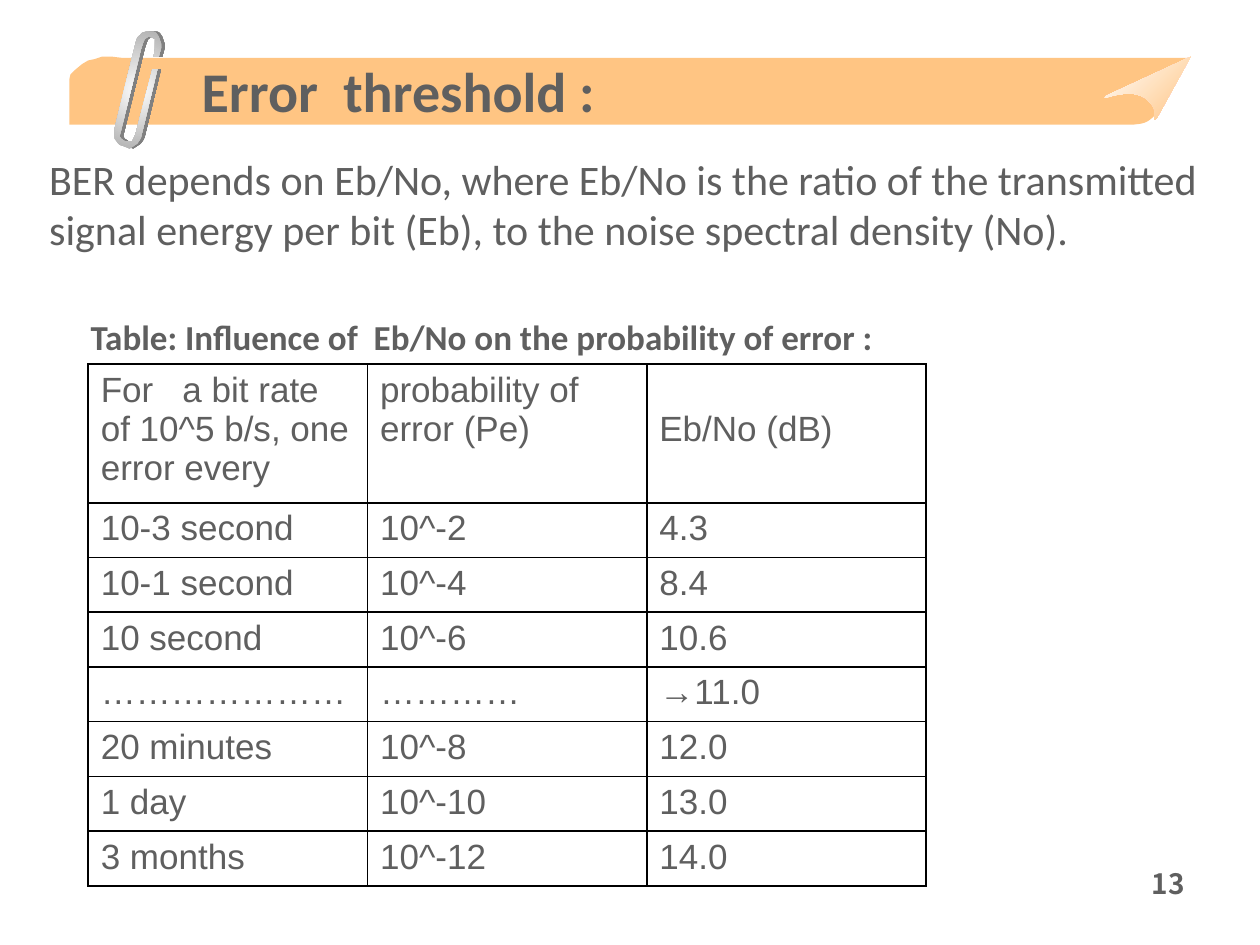
from dataclasses import dataclass

from lxml import etree
from pptx import Presentation, util as u
from pptx.dml import color
from pptx.enum import text
from pptx.oxml import ns


@dataclass(frozen=True)
class Theme:
    """Colours, fonts and type sizes of the deck."""
    ink: str = "5F5F5F"
    band: str = "FFC583"
    white: str = "FFFFFF"
    steel: tuple = ("FCFCFC", "B2B2B2")
    shade: str = "808080"
    rule: str = "000000"
    face: str = "Calibri"
    grid: str = "Arial"
    page: str = "Noto Sans CJK KR"
    head: int = 32
    body: int = 24
    cell: int = 20
    foot: int = 16


def rgb(code):
    """Turn a hex code into a colour."""
    return color.RGBColor.from_string(code)


def apply(item, vals):
    """Set each named value on an object."""
    for name, val in vals.items():
        setattr(item, name, val)


def node(parent, tag, **attrs):
    """Add a drawing element below a parent."""
    return etree.SubElement(parent, ns.qn(tag), attrs)


def curve(*pts, steps=10):
    """List points along a cubic curve, without its start."""
    out = []
    for i in range(1, steps + 1):
        t = i / steps
        parts = ((1 - t) ** 3, 3 * t * (1 - t) ** 2, 3 * t * t * (1 - t), t ** 3)
        out.append(tuple(sum(w * p[k] for w, p in zip(parts, pts)) for k in (0, 1)))
    return out


class Deck:
    """Hold the theme and the current slide."""

    def __init__(self, theme):
        """Start a deck with one slide."""
        self.theme = theme
        self.file = Presentation()
        apply(self.file, {"slide_width": u.Inches(10), "slide_height": u.Inches(7.5)})
        self.slide = self.file.slides.add_slide(self.file.slide_layouts[1])
        self.shapes = self.slide.shapes

    def letter(self, frame, words, size, face, bold=False, align="LEFT"):
        """Set one styled paragraph."""
        para = frame.paragraphs[0]
        para.text = words
        apply(para, {"alignment": getattr(text.PP_ALIGN, align), "space_before": u.Pt(0)})
        apply(para.font, {"size": u.Pt(size), "name": face, "bold": bold})
        para.font.color.rgb = rgb(self.theme.ink)

    def place(self, shape, box, words, size, face, anchor="TOP", **style):
        """Move a text shape and fill it."""
        names = ("left", "top", "width", "height")
        apply(shape, dict(zip(names, map(u.Inches, box))))
        frame = shape.text_frame
        apply(frame, {"word_wrap": True, "auto_size": text.MSO_AUTO_SIZE.NONE,
                      "vertical_anchor": getattr(text.MSO_ANCHOR, anchor)})
        self.letter(frame, words, size, face, **style)

    def title(self, box, words):
        """Fill the title placeholder."""
        shape = self.shapes.title
        self.shapes._spTree.append(shape._element)
        self.place(shape, box, words, self.theme.head, self.theme.face, bold=True)

    def body(self, box, words):
        """Fill the body placeholder with plain text."""
        shape = self.slide.placeholders[1]
        self.shapes._spTree.append(shape._element)
        props = shape.text_frame.paragraphs[0]._p.get_or_add_pPr()
        for name in ("marL", "indent"):
            props.set(name, "0")
        node(props, "a:buNone")
        self.place(shape, box, words, self.theme.body, self.theme.face, "MIDDLE")

    def label(self, box, words, size, face, **style):
        """Add a bold text box."""
        shape = self.shapes.add_textbox(0, 0, 0, 0)
        self.place(shape, box, words, size, face, bold=True, **style)

    def outline(self, pts, tones, radial=False):
        """Draw a closed outline in one tone or a blend."""
        start, *rest = [tuple(map(u.Inches, p)) for p in pts]
        pen = self.shapes.build_freeform(*start)
        pen.add_line_segments(rest, close=True)
        shape = pen.convert_to_shape()
        shape.line.fill.background()
        shape.shadow.inherit = False
        if len(tones) == 1:
            shape.fill.solid()
            shape.fill.fore_color.rgb = rgb(tones[0])
            return shape
        shape.fill.gradient()
        for stop, tone, spot in zip(shape.fill.gradient_stops, tones, (0, 1)):
            stop.color.rgb = rgb(tone)
            stop.position = spot
        shape.fill.gradient_angle = 315
        if radial:
            line = shape._element.spPr.find(".//" + ns.qn("a:lin"))
            grad = line.getparent()
            grad.remove(line)
            ring = node(grad, "a:path", path="circle")
            node(ring, "a:fillToRect", l="50000", t="50000", r="50000", b="50000")
        return shape

    def shadow(self, shape, gap):
        """Cast a hard shadow to the right."""
        effect = shape._element.spPr.find(ns.qn("a:effectLst"))
        cast = node(effect, "a:outerShdw", blurRad="0", dist=str(u.Pt(gap)), dir="0")
        node(cast, "a:srgbClr", val=self.theme.shade)

    def table(self, box, tall, rows):
        """Add a ruled table with a tall first row."""
        grid = self.shapes.add_table(len(rows), len(rows[0]), *map(u.Inches, box)).table
        apply(grid, {"first_row": False, "horz_banding": False})
        low = (box[3] - tall) / (len(rows) - 1)
        for r, row in enumerate(rows):
            grid.rows[r].height = u.Inches(low if r else tall)
            for c, words in enumerate(row):
                cell = grid.cell(r, c)
                self.letter(cell.text_frame, words, self.theme.cell, self.theme.grid)
                self.border(cell)
                cell.fill.background()
        grid.cell(0, 2).margin_top = u.Inches(0.36)

    def border(self, cell):
        """Rule all four sides of a cell."""
        props = cell._tc.get_or_add_tcPr()
        for side in "LRTB":
            line = node(props, "a:ln" + side, w=str(u.Pt(1)))
            node(node(line, "a:solidFill"), "a:srgbClr", val=self.theme.rule)


BAND = [(0.55, 0.99), (8.99, 0.99),
        *curve((8.99, 0.99), (9.06, 0.98), (9.1, 0.99), (9.18, 0.9)),
        (9.44, 0.46), (0.97, 0.46), (0.89, 0.45), (0.81, 0.45), (0.75, 0.47),
        (0.7, 0.48), (0.65, 0.51), (0.59, 0.56), (0.56, 0.59), (0.55, 0.63)]
FOLD = [(9.45, 0.45), (9.18, 0.94),
        *curve((9.18, 0.94), (9.12, 0.99), (9.23, 0.88), (9.09, 0.78)),
        *curve((9.09, 0.78), (8.95, 0.68), (8.71, 0.82), (8.78, 0.76))]
CLIP = [(1.21, 0.55), (1.25, 0.55), (1.12, 1.09), (1.11, 1.11), (1.09, 1.14),
        (1.06, 1.16), (1.03, 1.18), (0.98, 1.16), (0.95, 1.15), (0.94, 1.14),
        (0.91, 1.1), (0.91, 1.02), (1.08, 0.33), (1.09, 0.3), (1.11, 0.28),
        (1.13, 0.26), (1.16, 0.25), (1.22, 0.25), (1.24, 0.26), (1.26, 0.29),
        (1.27, 0.32), (1.28, 0.35), (1.28, 0.38), (1.26, 0.45), (1.22, 0.45),
        (1.23, 0.39), (1.23, 0.31), (1.21, 0.3), (1.18, 0.29), (1.15, 0.31),
        (1.14, 0.33), (1.13, 0.36), (1.12, 0.39), (0.96, 1.04), (0.95, 1.08),
        (0.96, 1.1), (0.99, 1.12), (1.05, 1.12), (1.07, 1.08), (1.08, 1.05)]
ROWS = [("For   a bit rate of 10^5 b/s, one error every", "probability of error (Pe)",
         "Eb/No (dB)"),
        ("10-3 second", "10^-2", "4.3"),
        ("10-1 second", "10^-4", "8.4"),
        ("10 second", "10^-6", "10.6"),
        ("…………………", "…………", "→11.0"),
        ("20 minutes", "10^-8", "12.0"),
        ("1 day", "10^-10", "13.0"),
        ("3 months", "10^-12", "14.0")]


def main():
    """Build the slide and save it."""
    theme = Theme()
    deck = Deck(theme)
    deck.outline(BAND, [theme.band])
    deck.outline(FOLD, [theme.white, theme.band])
    deck.shadow(deck.outline(CLIP, theme.steel, radial=True), 2)
    deck.body((0.29, 1.16, 9.42, 0.91),
              "BER depends on Eb/No, where Eb/No is the ratio of the transmitted "
              "signal energy per bit (Eb), to the noise spectral density (No).")
    deck.table((0.7, 2.89, 6.65, 4.14), 1.1, ROWS)
    deck.label((7.17, 6.83, 2.33, 0.52), "13", theme.foot, theme.page, align="RIGHT")
    deck.label((0.62, 2.45, 8.35, 0.44),
               "Table: Influence of  Eb/No on the probability of error :",
               theme.cell, theme.face, anchor="MIDDLE")
    deck.title((1.5, 0.4, 4, 0.64), "Error  threshold :")
    deck.file.save("out.pptx")


if __name__ == "__main__":
    main()
